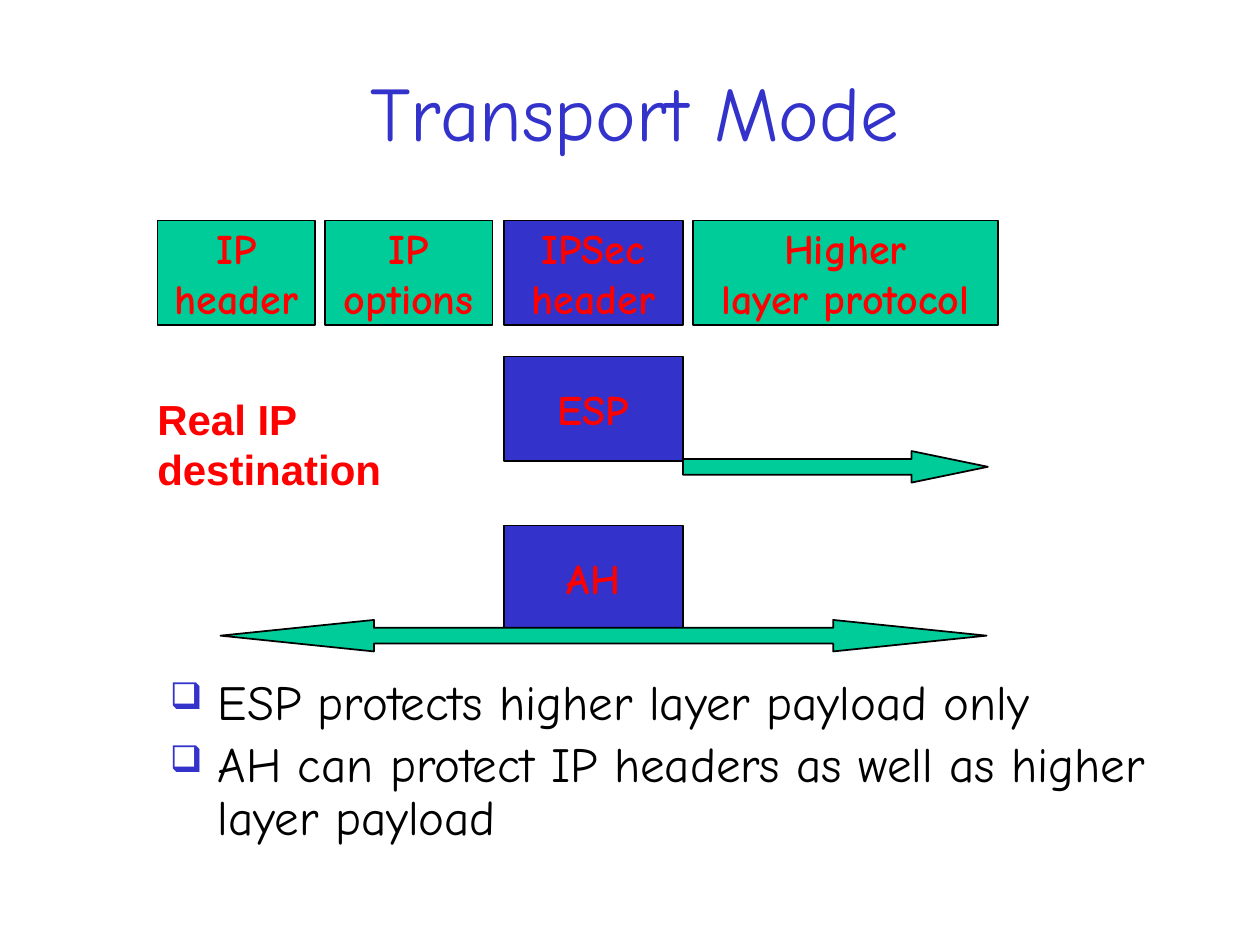
"""Build the Transport Mode slide."""
from lxml import etree
from pptx import Presentation
from pptx.dml.color import RGBColor
from pptx.enum.shapes import MSO_SHAPE
from pptx.enum.text import MSO_ANCHOR, PP_ALIGN
from pptx.oxml.ns import qn
from pptx.util import Inches, Pt

BLUE = RGBColor(0x33, 0x33, 0xCC)
GREEN = RGBColor(0x00, 0xCC, 0x99)
RED = RGBColor(0xFF, 0x00, 0x00)
BLACK = RGBColor(0x00, 0x00, 0x00)
RECT = MSO_SHAPE.RECTANGLE
RIGHT = MSO_SHAPE.RIGHT_ARROW
DOUBLE = MSO_SHAPE.LEFT_RIGHT_ARROW
MIDDLE, TOP = MSO_ANCHOR.MIDDLE, MSO_ANCHOR.TOP
CENTER, LEFT = PP_ALIGN.CENTER, PP_ALIGN.LEFT
COMIC = "Comic Neue"


def write(shape, lines, size, color, font=COMIC, bold=False,
          align=CENTER, anchor=MIDDLE, wrap=False):
    frame = shape.text_frame
    frame.text = "\n".join(lines)
    frame.word_wrap = wrap
    frame.vertical_anchor = anchor
    for para in frame.paragraphs:
        para.alignment = align
        for run in para.runs:
            run.font.size = Pt(size)
            run.font.name = font
            run.font.bold = bold
            run.font.color.rgb = color


def draw(kind, left, top, width, height, fill):
    shape = slide.shapes.add_shape(
        kind, Inches(left), Inches(top), Inches(width), Inches(height))
    shape.shadow.inherit = False
    shape.fill.solid()
    shape.fill.fore_color.rgb = fill
    shape.line.color.rgb = BLACK
    shape.line.width = Pt(1)
    return shape


deck = Presentation()
deck.slide_width, deck.slide_height = Inches(10), Inches(7.5)
slide = deck.slides.add_slide(deck.slide_layouts[6])

title = slide.shapes.add_textbox(Inches(1.08), Inches(0.25), Inches(7.92), Inches(1.25))
write(title, ["Transport Mode"], 44, BLUE, wrap=True)

body = slide.shapes.add_textbox(Inches(1.25), Inches(5.33), Inches(8.5), Inches(1.67))
points = ["ESP protects higher layer payload only",
          "AH can protect IP headers as well as higher layer payload"]
write(body, points, 28, BLACK, align=LEFT, anchor=TOP, wrap=True)
for para in body.text_frame.paragraphs:
    para.line_spacing = 0.9
    para.space_before = Pt(5.6)
    props = para._p.get_or_add_pPr()
    props.set("marL", str(Inches(0.38)))
    props.set("indent", str(Inches(-0.38)))
    tint = etree.SubElement(props, qn("a:buClr"))
    etree.SubElement(tint, qn("a:srgbClr"), val=str(BLUE))
    etree.SubElement(props, qn("a:buSzPct"), val="75000")
    etree.SubElement(props, qn("a:buChar"), char="❑")

boxes = [
    (1.25, 1.75, 1.25, GREEN, ["IP", "header"]),
    (2.58, 1.75, 1.33, GREEN, ["IP", "options"]),
    (4, 1.75, 1.42, BLUE, ["IPSec", "header"]),
    (5.5, 1.75, 2.42, GREEN, ["Higher", "layer protocol"]),
    (4, 2.83, 1.42, BLUE, ["ESP"]),
    (4, 4.17, 1.42, BLUE, ["AH"]),
]
for left, top, width, fill, lines in boxes:
    box = draw(RECT, left, top, width, 0.83, fill)
    write(box, lines, 24, RED, bold=True)

arrows = [(RIGHT, 5.42, 3.58, 2.42, 2.42), (DOUBLE, 1.75, 4.92, 6.08, 4.87)]
for kind, left, top, width, head in arrows:
    arrow = draw(kind, left, top, width, 0.25, GREEN)
    arrow.adjustments[0] = 0.5
    arrow.adjustments[1] = head

label = slide.shapes.add_textbox(Inches(1.15), Inches(3.07), Inches(2), Inches(0.91))
write(label, ["Real IP", "destination"], 24, RED, font="Arial", bold=True,
      align=LEFT, anchor=TOP)

deck.save("out.pptx")
